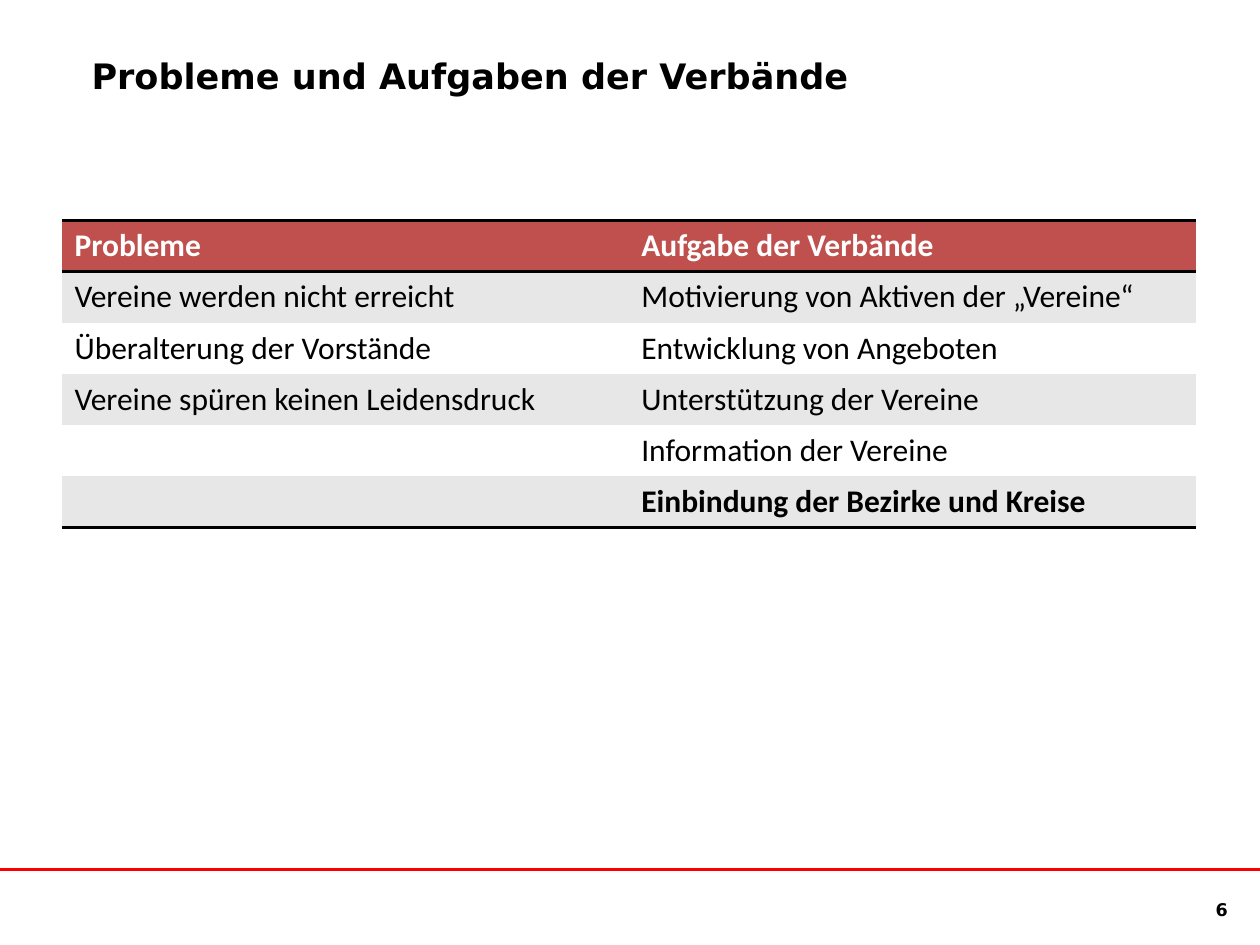
from lxml import etree
from pptx import Presentation
from pptx.dml.color import RGBColor
from pptx.enum.shapes import MSO_CONNECTOR
from pptx.enum.text import MSO_ANCHOR, PP_ALIGN
from pptx.oxml import parse_xml
from pptx.oxml.ns import nsdecls, qn
from pptx.util import Pt

STRAIGHT = MSO_CONNECTOR.STRAIGHT
TOP, BOTTOM = MSO_ANCHOR.TOP, MSO_ANCHOR.BOTTOM
LEFT, RIGHT = PP_ALIGN.LEFT, PP_ALIGN.RIGHT

COLORS = {
    "text": "000000",
    "white": "FFFFFF",
    "header": "C0504D",
    "band": "E7E7E7",
    "rule": "FA0000",
}
NO_STYLE = "{2D5ABB26-0587-4C30-8999-92F81FD0307C}"
ROWS = [
    ("Probleme", "Aufgabe der Verbände"),
    ("Vereine werden nicht erreicht", "Motivierung von Aktiven der „Vereine“"),
    ("Überalterung der Vorstände", "Entwicklung von Angeboten"),
    ("Vereine spüren keinen Leidensdruck", "Unterstützung der Vereine"),
    ("", "Information der Vereine"),
    ("", "Einbindung der Bezirke und Kreise"),
]


def rgb(name):
    """Return the named colour."""
    return RGBColor.from_string(COLORS[name])


def write(tf, text, font="DejaVu Sans", size=18, color="text", bold=False, align=LEFT):
    """Write one formatted paragraph into a text frame."""
    p = tf.paragraphs[0]
    p.alignment = align
    p.font.size = Pt(size)
    if text:
        r = p.add_run()
        r.text = text
        r.font.name = font
        r.font.size = Pt(size)
        r.font.bold = bold
        r.font.color.rgb = rgb(color)


def add_text(s, box, text, margins=(0, 0, 0, 0), anchor=TOP, **fmt):
    """Add a text box with given margins and anchor."""
    tf = s.shapes.add_textbox(*map(Pt, box)).text_frame
    tf.word_wrap = True
    tf.vertical_anchor = anchor
    tf.margin_left, tf.margin_top, tf.margin_right, tf.margin_bottom = map(Pt, margins)
    write(tf, text, **fmt)


def add_rule(s, y, width):
    """Add the horizontal footer rule."""
    line = s.shapes.add_connector(STRAIGHT, 0, Pt(y), Pt(width), Pt(y))
    line.line.color.rgb = rgb("rule")
    line.line.width = Pt(1.5)
    etree.SubElement(line._element.spPr, qn("a:effectLst"))


def add_borders(cell, sides):
    """Draw black borders on the listed sides of a cell."""
    for i, side in enumerate(sides):
        cell._tc.get_or_add_tcPr().insert(i, parse_xml(
            f'<a:ln{side} {nsdecls("a")} w="{Pt(2)}"><a:solidFill>'
            f'<a:srgbClr val="{COLORS["text"]}"/></a:solidFill></a:ln{side}>'))


def add_banded_table(s, left, top, col_width, row_height, rows):
    """Add a table with a header, banded rows and horizontal borders."""
    n_rows, n_cols = len(rows), len(rows[0])
    table = s.shapes.add_table(n_rows, n_cols, Pt(left), Pt(top), Pt(col_width * n_cols),
                               Pt(row_height * n_rows)).table
    table._tbl.tblPr.find(qn("a:tableStyleId")).text = NO_STYLE
    last = n_rows - 1
    for i, row in enumerate(rows):
        fill = "header" if i == 0 else "band" if i % 2 else "white"
        for j, text in enumerate(row):
            cell = table.cell(i, j)
            cell.fill.solid()
            cell.fill.fore_color.rgb = rgb(fill)
            add_borders(cell, {0: "TB", last: "B"}.get(i, ""))
            write(cell.text_frame, text, font="Calibri", bold=i in (0, last),
                  color="white" if i == 0 else "text")


def main():
    """Build and save the slide."""
    prs = Presentation()
    prs.slide_width, prs.slide_height = Pt(720), Pt(540)
    s = prs.slides.add_slide(prs.slide_layouts[6])
    add_text(s, (649.5, 513.5, 52, 12), "6", size=10, bold=True, align=RIGHT)
    add_rule(s, 496.8, 720)
    add_text(s, (45.2, 21.6, 507.6, 33.8), "Probleme und Aufgaben der Verbände",
             margins=(7.2, 3.6, 7.2, 0), anchor=BOTTOM, size=20, bold=True)
    add_banded_table(s, 35.4, 126, 323.9, 29.2, ROWS)
    prs.save("out.pptx")


if __name__ == "__main__":
    main()
